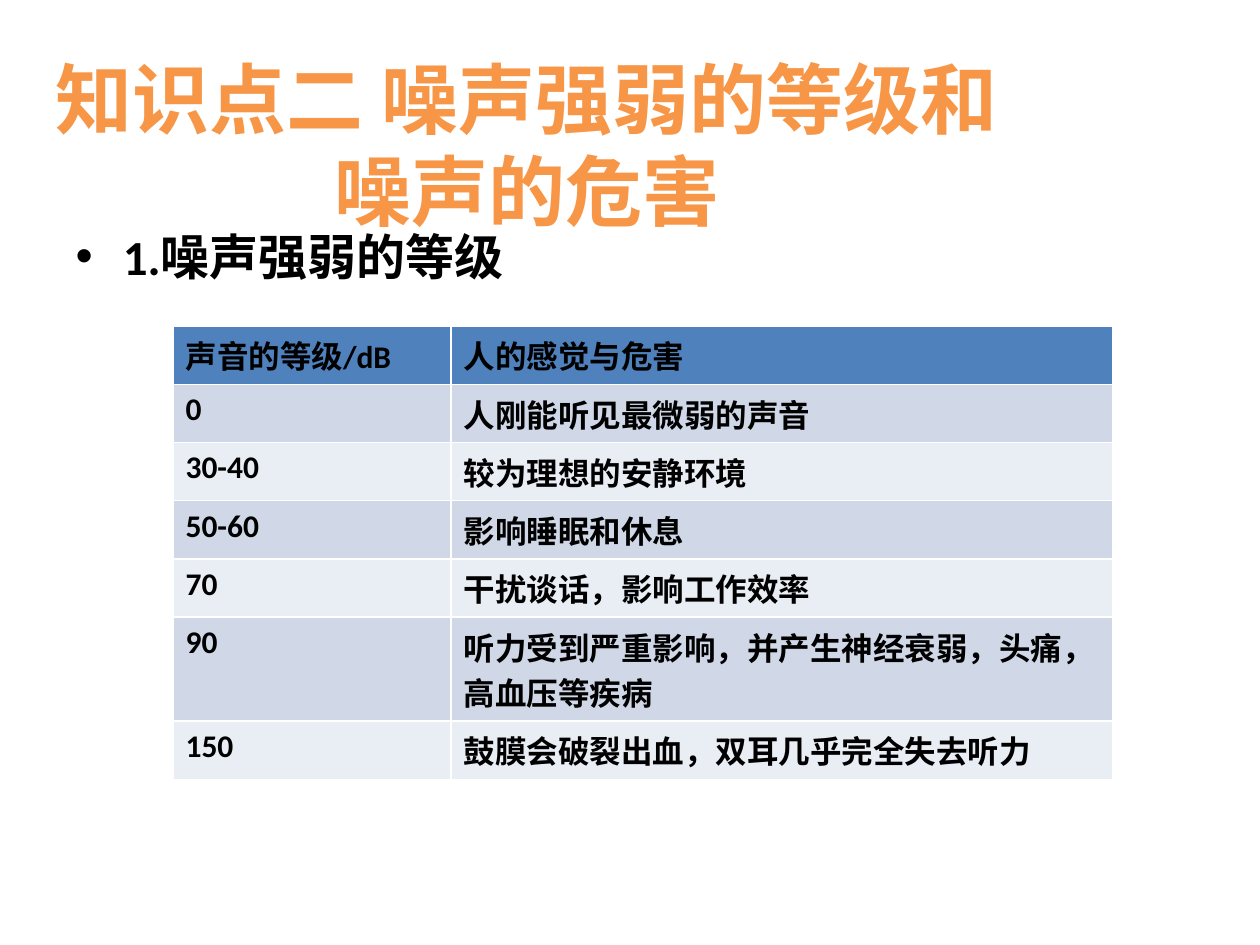
from pptx import Presentation
from pptx.dml.color import RGBColor
from pptx.enum.text import MSO_ANCHOR as Anchor, MSO_AUTO_SIZE as AutoSize, PP_ALIGN as Align
from pptx.util import Pt

PX = 914400 // 126
FONT = "Calibri"
ORANGE = RGBColor(0xF7, 0x96, 0x46)
BLACK = RGBColor(0x00, 0x00, 0x00)
HEADER_BLUE = RGBColor(0x4F, 0x81, 0xBD)
BANDS = [RGBColor(0xE9, 0xED, 0xF4), RGBColor(0xD0, 0xD8, 0xE8)]

COLUMN_WIDTHS = [278, 662]
ROW_HEIGHT = 54
TALL_ROW_HEIGHT = 94
TALL_ROW = 5
NOISE_LEVELS = [
    ("声音的等级/dB", "人的感觉与危害"),
    ("0", "人刚能听见最微弱的声音"),
    ("30-40", "较为理想的安静环境"),
    ("50-60", "影响睡眠和休息"),
    ("70", "干扰谈话，影响工作效率"),
    ("90", "听力受到严重影响，并产生神经衰弱，头痛，高血压等疾病"),
    ("150", "鼓膜会破裂出血，双耳几乎完全失去听力"),
]


def px(*lengths):
    return [length * PX for length in lengths]


def write(frame, text, size=18, color=BLACK, bold=True, align=None):
    paragraph = frame.paragraphs[0]
    paragraph.alignment = align
    run = paragraph.add_run()
    run.text = text
    run.font.name = FONT
    run.font.size = Pt(size)
    run.font.bold = bold
    run.font.color.rgb = color


def fill_placeholder(holder, box, text, anchor=Anchor.TOP, **text_format):
    holder.left, holder.top, holder.width, holder.height = px(*box)
    frame = holder.text_frame
    frame.auto_size = AutoSize.NONE
    frame.word_wrap = True
    frame.vertical_anchor = anchor
    write(frame, text, **text_format)


def add_level_table(slide, left, top):
    heights = [ROW_HEIGHT] * len(NOISE_LEVELS)
    heights[TALL_ROW] = TALL_ROW_HEIGHT
    box = px(left, top, sum(COLUMN_WIDTHS), sum(heights))
    table = slide.shapes.add_table(len(heights), len(COLUMN_WIDTHS), *box).table
    for column, width in zip(table.columns, px(*COLUMN_WIDTHS)):
        column.width = width
    for row, height in zip(table.rows, px(*heights)):
        row.height = height
    for r, level in enumerate(NOISE_LEVELS):
        for c, text in enumerate(level):
            cell = table.cell(r, c)
            cell.fill.solid()
            cell.fill.fore_color.rgb = BANDS[r % 2] if r else HEADER_BLUE
            write(cell.text_frame, text)


def main():
    deck = Presentation()
    deck.slide_width, deck.slide_height = px(1260, 945)
    slide = deck.slides.add_slide(deck.slide_layouts[1])
    fill_placeholder(slide.shapes.title, (21, 76, 1012, 136),
                     "知识点二 噪声强弱的等级和噪声的危害",
                     anchor=Anchor.MIDDLE, size=44, color=ORANGE, align=Align.CENTER)
    fill_placeholder(slide.placeholders[1], (63, 220, 1134, 624),
                     "1.噪声强弱的等级", size=28)
    add_level_table(slide, 173, 326)
    deck.save("out.pptx")


if __name__ == "__main__":
    main()
